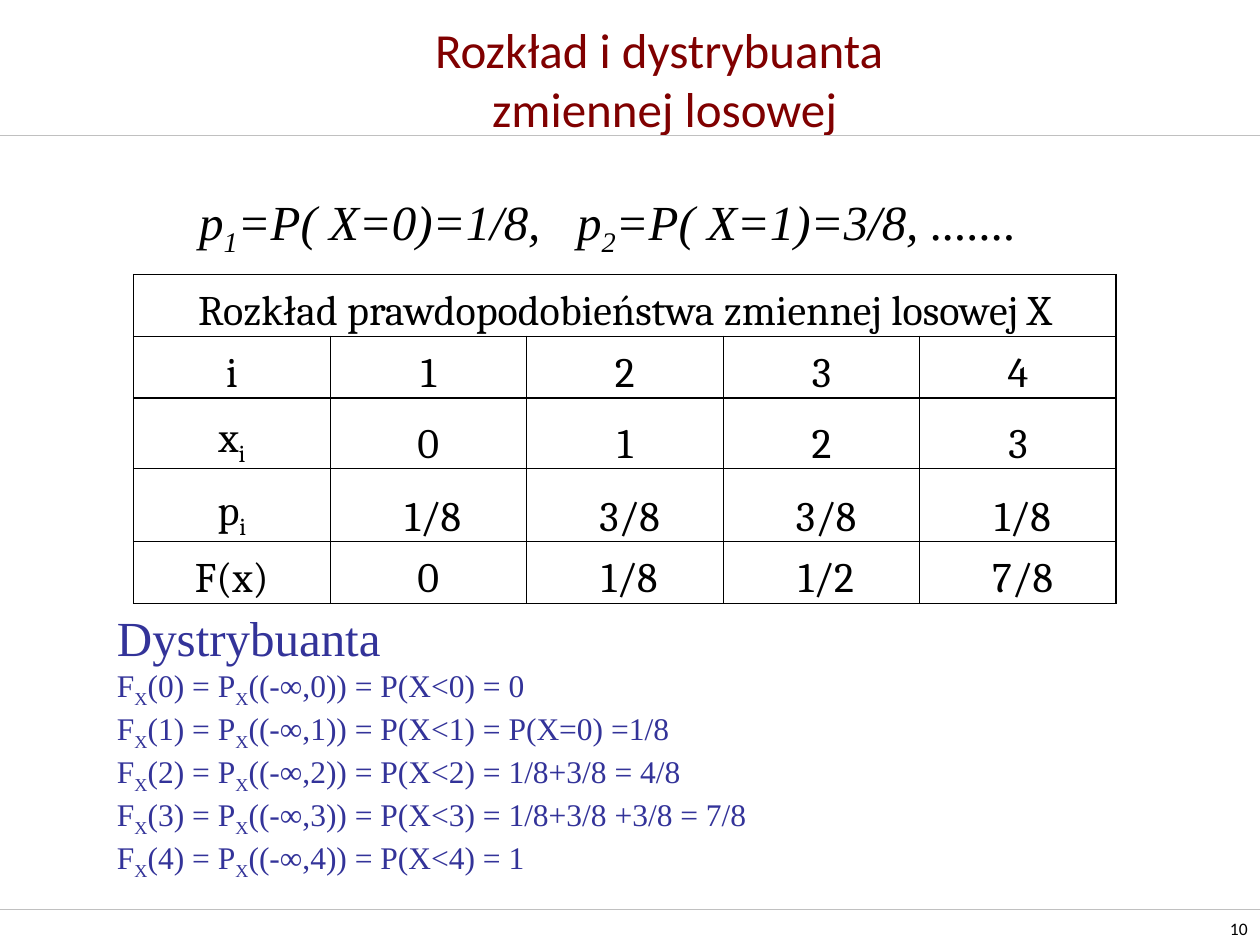
from lxml import etree
from pptx import Presentation
from pptx.dml.color import RGBColor
from pptx.enum.shapes import MSO_CONNECTOR
from pptx.enum.text import MSO_ANCHOR, MSO_AUTO_SIZE, PP_ALIGN
from pptx.oxml.ns import qn
from pptx.util import Inches, Pt

STRAIGHT = MSO_CONNECTOR.STRAIGHT
TOP, MIDDLE, BOTTOM = MSO_ANCHOR.TOP, MSO_ANCHOR.MIDDLE, MSO_ANCHOR.BOTTOM
LEFT, CENTER, RIGHT = PP_ALIGN.LEFT, PP_ALIGN.CENTER, PP_ALIGN.RIGHT
NO_AUTOFIT = MSO_AUTO_SIZE.NONE

BLACK = RGBColor(0x00, 0x00, 0x00)
MAROON = RGBColor(0x80, 0x00, 0x00)
INDIGO = RGBColor(0x33, 0x33, 0x99)
SILVER = RGBColor(0xC0, 0xC0, 0xC0)

TITLE_FORMAT = {"name": "Calibri", "size": Pt(28), "color": MAROON}
FORMULA_FORMAT = {"name": "Times New Roman", "size": Pt(28), "color": BLACK, "italic": True}
HEADING_FORMAT = {"name": "Times New Roman", "size": Pt(28), "color": INDIGO}
LINE_FORMAT = {**HEADING_FORMAT, "size": Pt(18)}
CELL_FORMAT = {"name": "Cambria", "size": Pt(24), "color": BLACK}
NUMBER_FORMAT = {"name": "Calibri", "size": Pt(10), "color": BLACK}

TABLE_TITLE = "Rozkład prawdopodobieństwa zmiennej losowej X"
TABLE_ROWS = [
    [TABLE_TITLE, "", "", "", ""],
    ["i", "1", "2", "3", "4"],
    ["x~i~", "0", "1", "2", "3"],
    ["p~i~", " 1/8", " 3/8", " 3/8", " 1/8"],
    ["F(x)", "0", " 1/8", " 1/2", " 7/8"],
]
ROW_HEIGHTS = [0.49, 0.49, 0.56, 0.58, 0.49]
COLUMN_WIDTH = 1.56
ROW_EDGES = [1, 1, 1, 0.5, 1, 1]
COLUMN_EDGES = [1, 0.5, 0.5, 0.5, 0.5, 1]

DISTRIBUTION_RESULTS = ["0", "P(X=0) =1/8", "1/8+3/8 = 4/8", "1/8+3/8 +3/8 = 7/8", "1"]


def set_format(font, values):
    for name, value in values.items():
        if name == "color":
            font.color.rgb = value
        else:
            setattr(font, name, value)


def write_paragraph(paragraph, text, values, alignment=LEFT):
    """Write text in which ~marks~ enclose subscripts."""
    paragraph.alignment = alignment
    for index, part in enumerate(text.split("~")):
        if part:
            run = paragraph.add_run()
            run.text = part
            set_format(run.font, values)
            if index % 2:
                run._r.get_or_add_rPr().set("baseline", "-25000")


def place(shape, left, top, width, height, anchor):
    shape.left, shape.top = Inches(left), Inches(top)
    shape.width, shape.height = Inches(width), Inches(height)
    frame = shape.text_frame
    frame.word_wrap = True
    frame.auto_size = NO_AUTOFIT
    frame.vertical_anchor = anchor
    return frame


def add_text(slide, box, lines, anchor=TOP, alignment=LEFT):
    shape = slide.shapes.add_textbox(0, 0, 0, 0)
    frame = place(shape, *box, anchor)
    for index, (text, values) in enumerate(lines):
        paragraph = frame.add_paragraph() if index else frame.paragraphs[0]
        write_paragraph(paragraph, text, values, alignment)


def add_rule(slide, top):
    line = slide.shapes.add_connector(
        STRAIGHT, Inches(0), Inches(top), Inches(10), Inches(top))
    line.line.color.rgb = SILVER
    line.line.width = Pt(0.25)
    etree.SubElement(line._element.spPr, qn("a:effectLst"))


def fill_title(slide):
    frame = place(slide.shapes.title, 0.91, 0, 8.73, 1.25, MIDDLE)
    paragraph = frame.paragraphs[0]
    paragraph.alignment = CENTER
    paragraph.text = "Rozkład i dystrybuanta \vzmiennej losowej"
    for run in paragraph.runs:
        set_format(run.font, TITLE_FORMAT)


def fill_formula(slide):
    frame = place(slide.placeholders[1], 0.98, 1.47, 8.5, 0.67, TOP)
    paragraph = frame.paragraphs[0]
    paragraph.space_before = Pt(0)
    properties = paragraph._p.get_or_add_pPr()
    properties.set("marL", "0")
    properties.set("indent", "0")
    etree.SubElement(properties, qn("a:buNone"))
    tabs = etree.SubElement(properties, qn("a:tabLst"))
    for position in (1, 4):
        etree.SubElement(tabs, qn("a:tab"), pos=str(Inches(position)), algn="l")
    write_paragraph(
        paragraph, "\tp~1~=P( X=0)=1/8, \tp~2~=P( X=1)=3/8, .......", FORMULA_FORMAT)


def set_borders(cell, widths):
    """Draw the left, right, top and bottom borders, widths in points."""
    properties = cell._tc.get_or_add_tcPr()
    for side, width in zip("LRTB", widths):
        line = etree.SubElement(properties, qn(f"a:ln{side}"), w=str(Pt(width)))
        fill = etree.SubElement(line, qn("a:solidFill"))
        etree.SubElement(fill, qn("a:srgbClr"), val=str(BLACK))


def add_distribution_table(slide):
    column_count = len(TABLE_ROWS[0])
    table = slide.shapes.add_table(
        len(TABLE_ROWS), column_count, Inches(1.06), Inches(2.18),
        Inches(COLUMN_WIDTH * column_count), Inches(sum(ROW_HEIGHTS))).table
    table.first_row = table.horz_banding = False
    for column in table.columns:
        column.width = Inches(COLUMN_WIDTH)
    for row, height in zip(table.rows, ROW_HEIGHTS):
        row.height = Inches(height)
    table.cell(0, 0).merge(table.cell(0, column_count - 1))
    for i, texts in enumerate(TABLE_ROWS):
        edges = COLUMN_EDGES if i else [1] * (column_count + 1)
        for j, text in enumerate(texts):
            cell = table.cell(i, j)
            cell.margin_left = cell.margin_right = cell.margin_top = Inches(0.01)
            cell.margin_bottom = 0
            cell.vertical_anchor = BOTTOM
            set_borders(cell, (edges[j], edges[j + 1], ROW_EDGES[i], ROW_EDGES[i + 1]))
            cell.fill.background()
            write_paragraph(cell.text_frame.paragraphs[0], text, CELL_FORMAT, CENTER)


def add_distribution_function(slide):
    lines = [("Dystrybuanta", HEADING_FORMAT)]
    for x, result in enumerate(DISTRIBUTION_RESULTS):
        lines.append((f"F~X~({x}) = P~X~((-∞,{x})) = P(X<{x}) = {result}", LINE_FORMAT))
    add_text(slide, (0.83, 4.77, 8.66, 2.56), lines)


def main():
    presentation = Presentation()
    presentation.slide_width, presentation.slide_height = Inches(10), Inches(7.5)
    slide = presentation.slides.add_slide(presentation.slide_layouts[1])
    for top in (1.07, 7.22):
        add_rule(slide, top)
    add_text(slide, (9.49, 7.22, 0.51, 0.28), [("10", NUMBER_FORMAT)], BOTTOM, RIGHT)
    fill_title(slide)
    fill_formula(slide)
    add_distribution_function(slide)
    add_distribution_table(slide)
    presentation.save("out.pptx")


if __name__ == "__main__":
    main()
